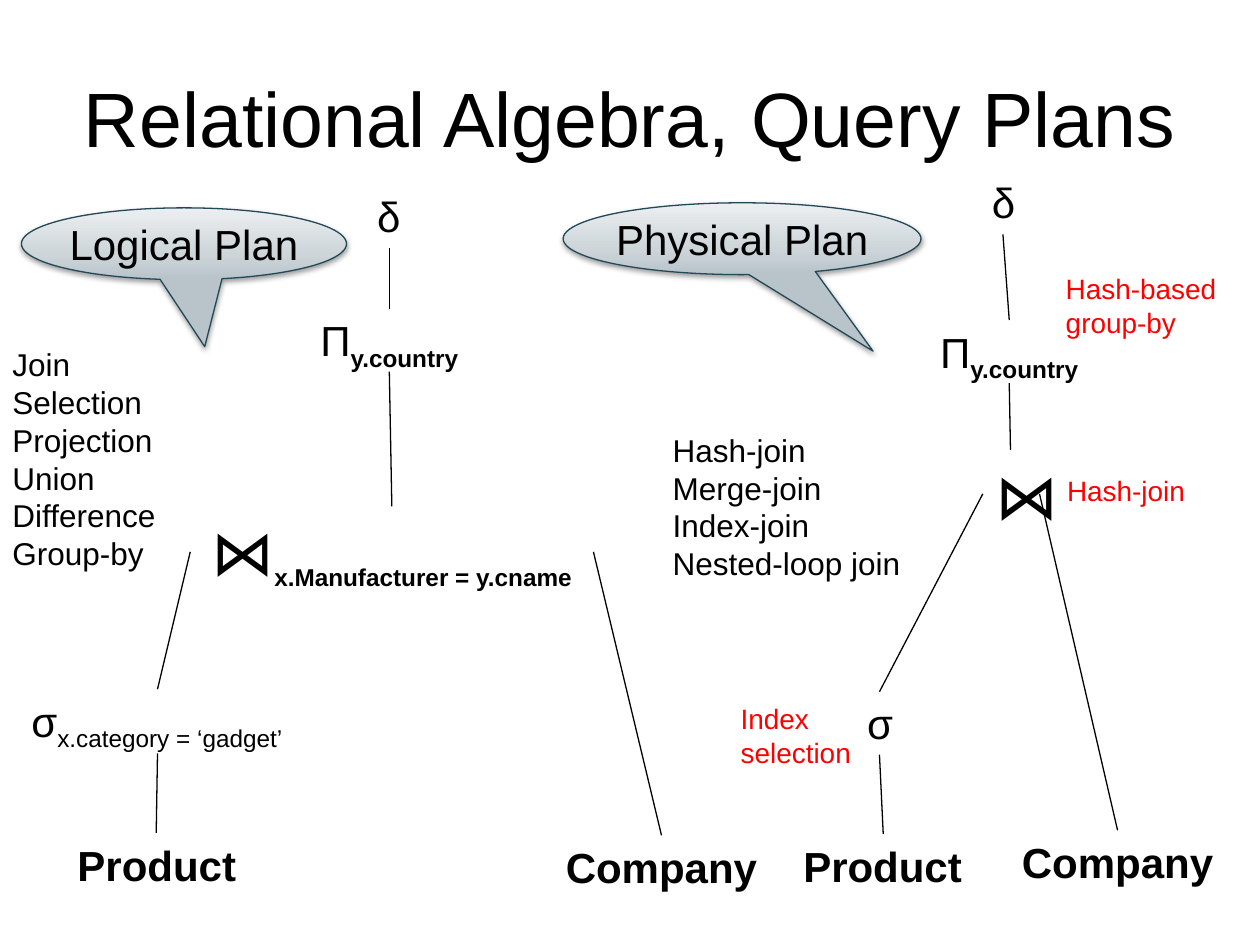
from copy import deepcopy

from lxml.etree import SubElement
from pptx import Presentation
from pptx.dml.color import RGBColor
from pptx.enum.shapes import MSO_CONNECTOR, MSO_SHAPE
from pptx.enum.text import MSO_ANCHOR, MSO_AUTO_SIZE, PP_ALIGN
from pptx.oxml.ns import qn
from pptx.util import Inches, Pt

BLACK = RGBColor(0x00, 0x00, 0x00)
RED = RGBColor(0xFF, 0x00, 0x00)
TEAL = RGBColor(0x22, 0x49, 0x57)
CALLOUT_STOPS = (
    (0, RGBColor(0xB8, 0xC3, 0xCA)),
    (0.35, RGBColor(0xCD, 0xD5, 0xD9)),
    (1, RGBColor(0xEC, 0xEF, 0xF1)),
)

LOGICAL_NODES = (
    ("Product", (0.51, 6.61, 1.47, 0.51), {"bold": True}),
    ("Company", (4.38, 6.63, 1.74, 0.51), {"bold": True}),
    ("δ", (2.89, 1.46, 0.39, 0.5), {}),
    ("Π", (2.37, 2.45, 1.44, 0.5), {"subscript": "y.country"}),
    ("σ", (0, 5.47, 2.54, 0.5),
     {"subscript": "x.category = ‘gadget’ ", "subscript_bold": False}),
    ("⋈", (1.51, 4.02, 3.2, 0.71),
     {"size": 36, "subscript": "x.Manufacturer = y.cname"}),
)
LOGICAL_EDGES = (
    (1.25, 5.47, 1.51, 4.38),
    (5.25, 6.63, 4.71, 4.38),
    (3.11, 4.02, 3.09, 2.95),
    (3.09, 2.45, 3.09, 1.97),
    (1.24, 6.61, 1.25, 5.98),
)
LOGICAL_OPERATORS = "Join\nSelection\nProjection\nUnion\nDifference\nGroup-by"

PHYSICAL_NODES = (
    ("Product", (6.27, 6.62, 1.47, 0.51), {"bold": True}),
    ("Company", (8, 6.59, 1.74, 0.51), {"bold": True}),
    ("δ", (7.77, 1.35, 0.39, 0.5), {}),
    ("Π", (7.29, 2.54, 1.44, 0.5), {"subscript": "y.country"}),
    ("σ", (6.78, 5.49, 0.41, 0.5), {}),
    ("⋈", (7.8, 3.57, 0.45, 0.71), {"size": 36}),
)
PHYSICAL_EDGES = (
    (6.98, 5.49, 7.8, 3.92),
    (8.02, 3.57, 8.01, 3.04),
    (8.01, 2.54, 7.96, 1.86),
    (6.98, 5.99, 7.01, 6.62),
    (8.25, 3.92, 8.87, 6.59),
)
PHYSICAL_OPERATORS = "Hash-join\nMerge-join\nIndex-join\nNested-loop join"
PHYSICAL_CHOICES = (
    ("Index\vselection", (5.78, 5.52, 1.09, 0.64)),
    ("Hash-join", (8.37, 3.71, 1.15, 0.37)),
    ("Hash-based\vgroup-by", (8.36, 2.11, 1.41, 0.64)),
)


def add_span(para, text, size, color, bold, baseline=None):
    """Append one formatted run to a paragraph."""
    span = para.add_run()
    span.text = text
    span.font.name = "Arial"
    span.font.size = Pt(size)
    span.font.bold = bold
    span.font.color.rgb = color
    if baseline:
        span.font._element.set("baseline", str(baseline))


def write(frame, text, size=24, color=BLACK, bold=False, align=PP_ALIGN.CENTER,
          subscript="", subscript_bold=True, space_before=0):
    """Fill a frame; a newline starts a paragraph, a vertical tab breaks a line."""
    for index, content in enumerate(text.split("\n")):
        para = frame.add_paragraph() if index else frame.paragraphs[0]
        para.alignment = align
        para.space_before = Pt(space_before)
        for number, line in enumerate(content.split("\v")):
            if number:
                para.add_line_break()
            add_span(para, line, size, color, bold)
        if subscript:
            add_span(para, subscript, 24, color, subscript_bold, -25000)


def add_label(shapes, text, place, **style):
    """Add an unwrapped text box that fits its text."""
    box = shapes.add_textbox(*map(Inches, place))
    box.text_frame.word_wrap = False
    box.text_frame.auto_size = MSO_AUTO_SIZE.SHAPE_TO_FIT_TEXT
    write(box.text_frame, text, **style)


def add_edge(shapes, ends):
    """Add a thin straight line between two tree nodes."""
    edge = shapes.add_connector(MSO_CONNECTOR.STRAIGHT, *map(Inches, ends))
    edge.line.color.rgb = BLACK
    edge.line.width = Pt(0.75)
    SubElement(edge._element.spPr, qn("a:effectLst"))


def add_tree(shapes, nodes, edges):
    """Add the nodes and edges of one query plan."""
    for text, place, style in nodes:
        add_label(shapes, text, place, **style)
    for ends in edges:
        add_edge(shapes, ends)


def shade(shape):
    """Give a shape the callout gradient and a soft shadow."""
    shape.fill.gradient()
    shape.fill.gradient_angle = 90
    properties = shape._element.spPr
    stop_list = properties.find(".//" + qn("a:gsLst"))
    stop_list.append(deepcopy(stop_list[-1]))
    for stop, (position, color) in zip(shape.fill.gradient_stops, CALLOUT_STOPS):
        stop.position = position
        stop.color.rgb = color
    shape.shadow.inherit = False
    shadow = SubElement(
        properties.find(qn("a:effectLst")), qn("a:outerShdw"),
        blurRad=str(Pt(3.1)), dist=str(Pt(1.6)), dir="5400000", rotWithShape="0")
    tint = SubElement(shadow, qn("a:srgbClr"), val="000000")
    SubElement(tint, qn("a:alpha"), val="38000")


def add_callout(shapes, text, place, tip):
    """Add a shaded speech bubble whose tail ends at tip."""
    bubble = shapes.add_shape(MSO_SHAPE.OVAL_CALLOUT, *map(Inches, place))
    bubble.adjustments[0], bubble.adjustments[1] = tip
    bubble.line.color.rgb = TEAL
    bubble.line.width = Pt(0.75)
    shade(bubble)
    frame = bubble.text_frame
    frame.margin_left = frame.margin_right = 0
    frame.margin_top = frame.margin_bottom = 0
    frame.word_wrap = False
    frame.auto_size = MSO_AUTO_SIZE.SHAPE_TO_FIT_TEXT
    write(frame, text, space_before=4.8)


def add_title(page, text):
    """Place and write the slide title."""
    title = page.shapes.title
    title.left, title.top = Inches(0.5), Inches(0.3)
    title.width, title.height = Inches(9), Inches(1.25)
    title.text_frame.vertical_anchor = MSO_ANCHOR.MIDDLE
    write(title.text_frame, text, size=44)


def main():
    """Build the query plan slide."""
    deck = Presentation()
    deck.slide_width, deck.slide_height = Inches(10), Inches(7.5)
    page = deck.slides.add_slide(deck.slide_layouts[5])
    add_title(page, "Relational Algebra, Query Plans")

    add_tree(page.shapes, LOGICAL_NODES, LOGICAL_EDGES)
    add_callout(page.shapes, "Logical Plan", (0.17, 1.65, 2.58, 0.57), (0.064, 1.433))
    add_callout(page.shapes, "Physical Plan", (4.47, 1.61, 2.84, 0.57), (0.366, 1.566))
    add_label(page.shapes, LOGICAL_OPERATORS, (0, 2.69, 1.35, 1.92),
              size=18, align=PP_ALIGN.LEFT)

    physical = page.shapes.add_group_shape().shapes
    add_tree(physical, PHYSICAL_NODES, PHYSICAL_EDGES)
    for text, place in PHYSICAL_CHOICES:
        add_label(physical, text, place, size=16, color=RED, align=PP_ALIGN.LEFT)
    add_label(physical, PHYSICAL_OPERATORS, (5.24, 3.37, 2.03, 1.31),
              size=18, align=PP_ALIGN.LEFT)
    deck.save("out.pptx")


if __name__ == "__main__":
    main()
